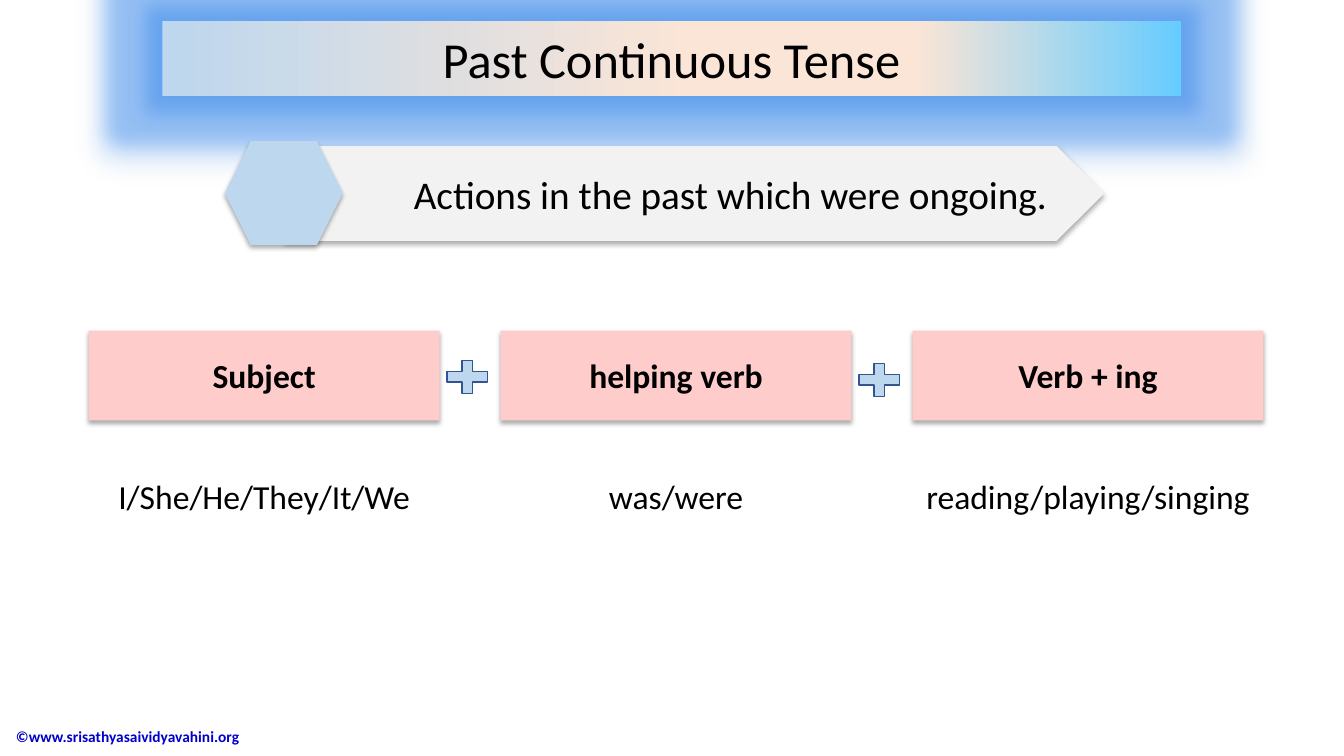
"""Build the Past Continuous Tense grammar slide."""
from lxml.etree import SubElement
from pptx import Presentation
from pptx.dml.color import RGBColor
from pptx.enum.shapes import MSO_SHAPE
from pptx.enum.text import MSO_ANCHOR, PP_ALIGN
from pptx.oxml.ns import qn
from pptx.util import Inches, Pt

THEME = {
    "font": "Calibri", "ink": "000000", "footer_ink": "0000CC",
    "sky": "BDD7EE", "banner": "F2F2F2", "card": "FFCCCC", "plus_line": "325491",
    "title_stops": [(0, "BDD7EE"), (52, "FBE5D6"), (74, "FBE5D6"), (100, "66CCFF")],
    "glow": "5599EE", "halo": "0066DD", "shadow": "000000",
    "title": 36, "definition": 28, "body": 24, "footer": 11,
}

deck = Presentation()
deck.slide_width, deck.slide_height = Inches(13.33), Inches(7.5)
slide = deck.slides.add_slide(deck.slide_layouts[6])


def add_block(kind, left, top, width, height, fill=None):
    """Add a shape, or a text box if kind is None, placed in percent of the slide."""
    across, down = deck.slide_width / 100, deck.slide_height / 100
    box = [int(left * across), int(top * down), int(width * across), int(height * down)]
    if kind is None:
        return slide.shapes.add_textbox(*box)
    block = slide.shapes.add_shape(kind, *box)
    block.shadow.inherit = False
    block.line.fill.background()
    if fill:
        block.fill.solid()
        block.fill.fore_color.rgb = RGBColor.from_string(fill)
    return block


def write(block, text, size, color=THEME["ink"], bold=False, align=PP_ALIGN.CENTER):
    """Put one line of styled text in a block."""
    frame = block.text_frame
    frame.word_wrap = True
    frame.vertical_anchor = MSO_ANCHOR.MIDDLE
    line = frame.paragraphs[0]
    line.text, line.alignment = text, align
    style = {"name": THEME["font"], "size": Pt(size), "bold": bold}
    for key, value in style.items():
        setattr(line.runs[0].font, key, value)
    line.runs[0].font.color.rgb = RGBColor.from_string(color)


footer = add_block(None, 0.45, 94.67, 26.5, 5.33)
write(footer, "©www.srisathyasaividyavahini.org", THEME["footer"],
      THEME["footer_ink"], True, PP_ALIGN.LEFT)

title = add_block(MSO_SHAPE.RECTANGLE, 12.08, 2.8, 75.77, 9.87)
write(title, "Past Continuous Tense", THEME["title"])
title.fill.gradient()
title.fill.gradient_angle = 0
stops = title.fill._fill._gradFill.find(qn("a:gsLst"))
for old_stop in list(stops):
    stops.remove(old_stop)
for position, color in THEME["title_stops"]:
    stop = SubElement(stops, qn("a:gs"), pos=str(position * 1000))
    SubElement(stop, qn("a:srgbClr"), val=color)

banner = add_block(MSO_SHAPE.PENTAGON, 21.16, 19.33, 60.99, 12.53, THEME["banner"])
banner.text_frame.margin_left = Inches(1.05)
write(banner, "Actions in the past which were ongoing.", THEME["definition"])
hexagon = add_block(MSO_SHAPE.HEXAGON, 16.73, 18.67, 8.78, 13.73, THEME["sky"])

shadowed = [banner, hexagon]
formula = [("Subject", "I/She/He/They/It/We"),
           ("helping verb", "was/were"),
           ("Verb + ing", "reading/playing/singing")]
first_left, pitch, card_width, card_height = 6.6, 30.65, 26.11, 11.87
for column, (part, examples) in enumerate(formula):
    left = first_left + column * pitch
    card = add_block(MSO_SHAPE.RECTANGLE, left, 43.73, card_width, card_height, THEME["card"])
    write(card, part, THEME["body"], bold=True)
    shadowed.append(card)
    example = add_block(None, left, 59.73, card_width, card_height)
    write(example, examples, THEME["body"])

for column, top in enumerate((46.93, 47.33)):
    plus_left = first_left + column * pitch + card_width
    plus = add_block(MSO_SHAPE.MATH_PLUS, plus_left, top, 4.13, 5.87, THEME["sky"])
    plus.line.color.rgb = RGBColor.from_string(THEME["plus_line"])
    plus.line.width = Pt(1)

effects = [(title, "a:glow", {"rad": Pt(27)}, THEME["glow"], 52),
           (title, "a:outerShdw", {"blurRad": Pt(9), "dist": 0, "sx": 102000, "sy": 125000,
                                   "algn": "ctr"}, THEME["halo"], 35)]
effects += [(block, "a:outerShdw", {"blurRad": Pt(3.5), "dist": Pt(2.2), "dir": 5400000},
             THEME["shadow"], 32) for block in shadowed]
for block, tag, settings, color, opacity in effects:
    effect_list = block._element.spPr.find(qn("a:effectLst"))
    effect = SubElement(effect_list, qn(tag), {k: str(v) for k, v in settings.items()})
    tint = SubElement(effect, qn("a:srgbClr"), val=color)
    SubElement(tint, qn("a:alpha"), val=str(opacity * 1000))

deck.save("out.pptx")
